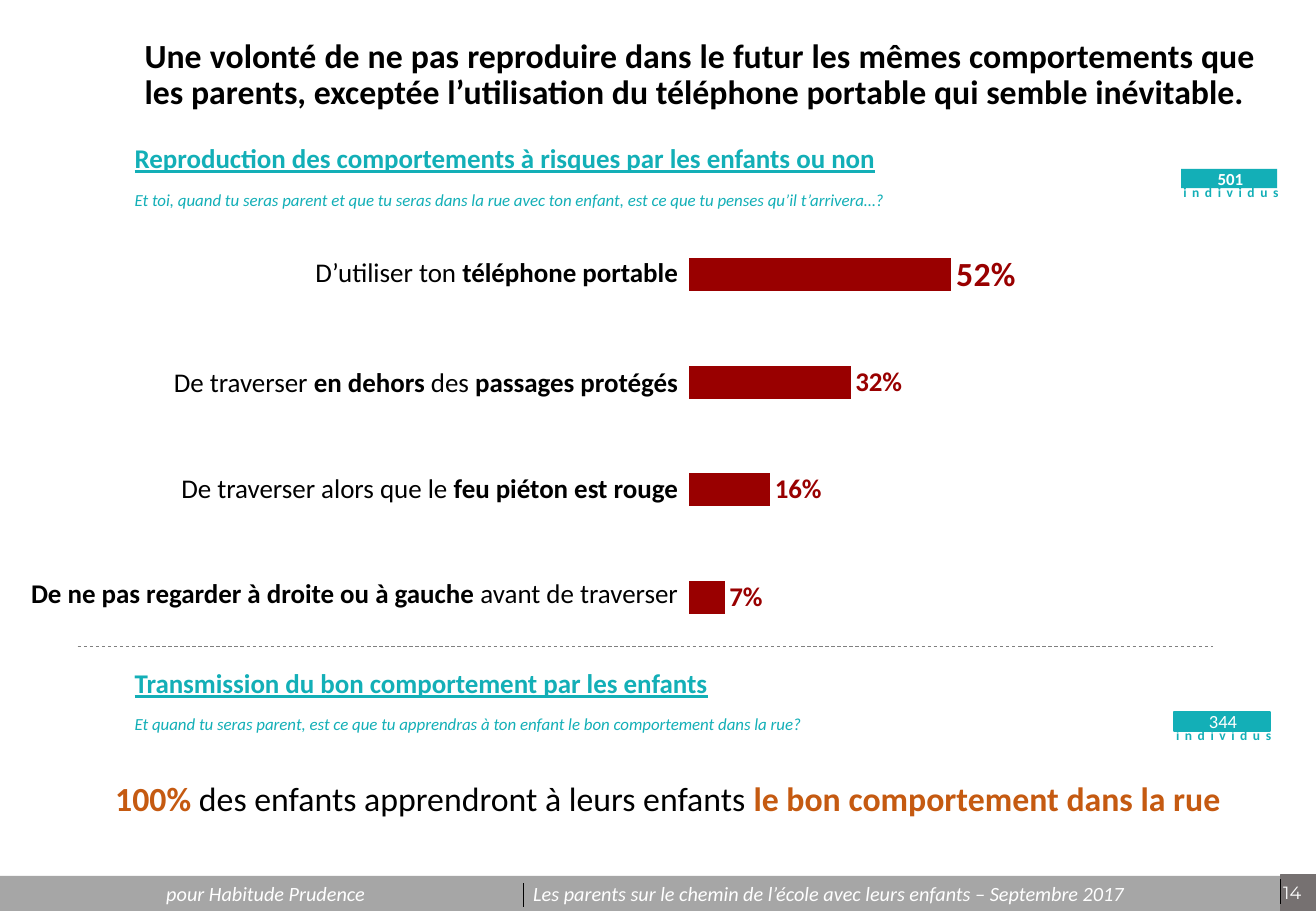
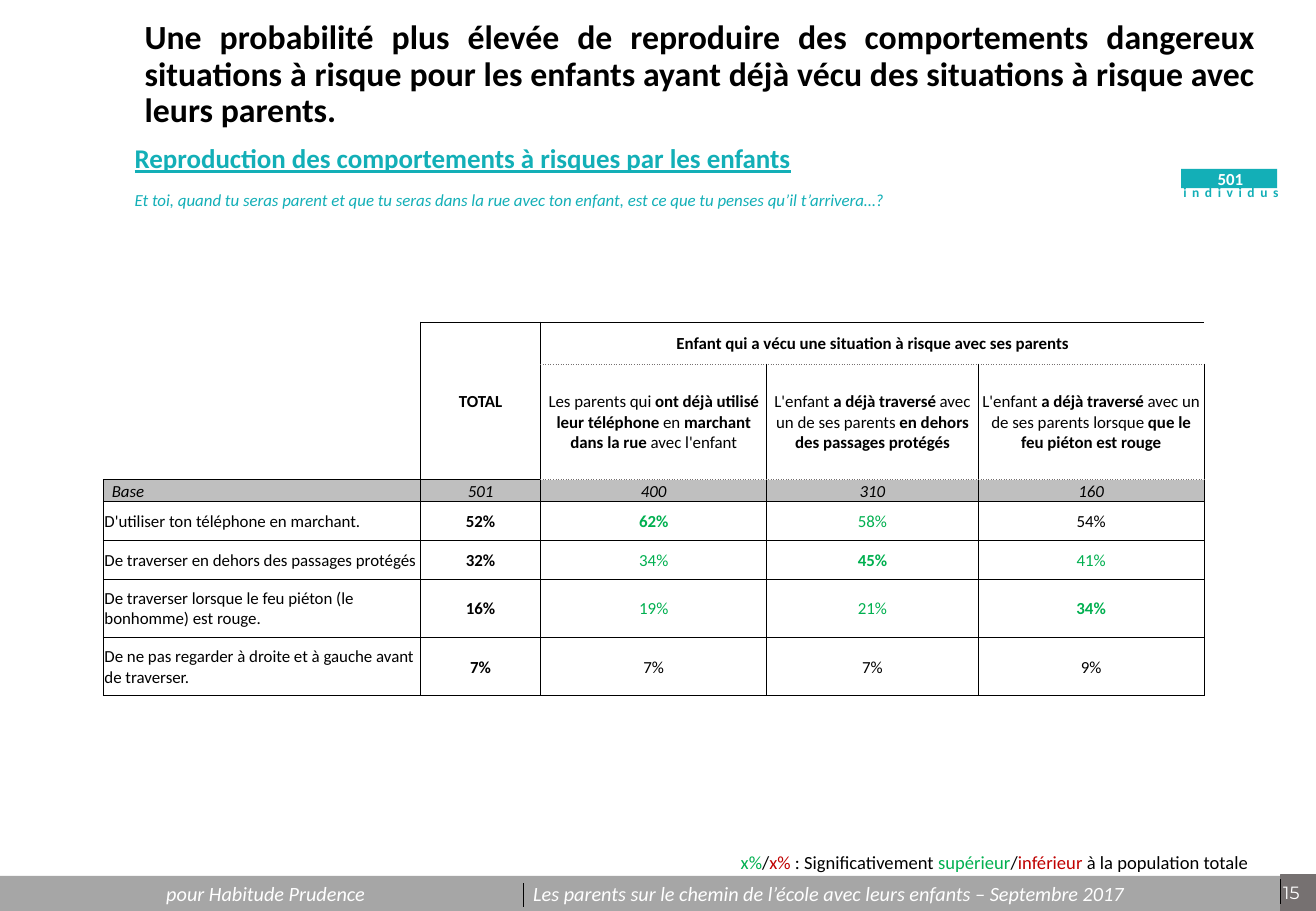
"""Build two survey slides on children's road behaviour."""
from lxml import etree
from pptx import Presentation
from pptx.chart.data import CategoryChartData
from pptx.dml.color import RGBColor
from pptx.enum import chart as charts, dml, shapes, text
from pptx.oxml.ns import qn
from pptx.util import Inches, Pt

TEAL = RGBColor(0x13, 0xAF, 0xB7)
BLACK = RGBColor(0, 0, 0)
WHITE = RGBColor(255, 255, 255)
BAND = RGBColor(0xA6, 0xA6, 0xA6)
SLATE = RGBColor(0x76, 0x71, 0x71)
SILVER = RGBColor(0xBF, 0xBF, 0xBF)
GREY = RGBColor(0x80, 0x80, 0x80)
ORANGE = RGBColor(0xC5, 0x5A, 0x11)
GREEN = RGBColor(0x00, 0xB0, 0x50)
RED = RGBColor(0xC0, 0, 0)
MAROON = RGBColor(0x99, 0, 0)
FONT = "Calibri"
PLAIN = "{2D5ABB26-0587-4C30-8999-92F81FD0307C}"
LEFT, MID, RIGHT, FULL = (text.PP_ALIGN.LEFT, text.PP_ALIGN.CENTER,
                          text.PP_ALIGN.RIGHT, text.PP_ALIGN.JUSTIFY)
CENTRE = text.MSO_ANCHOR.MIDDLE
ASK = ("Et toi, quand tu seras parent et que tu seras dans la rue avec ton enfant, "
       "est ce que tu penses qu’il t’arrivera…?")


def style(font, size, color, flags="", name=FONT):
    """Format a font; flags holds b, i and u."""
    font.name, font.size = name, Pt(size)
    font.color.rgb = color
    font.bold, font.italic, font.underline = (f in flags for f in "biu")


def write(para, size, parts, align=LEFT, name=FONT):
    """Add runs given as (words, color, flags)."""
    para.alignment = align
    for words, color, flags in parts:
        run = para.add_run()
        run.text = words
        style(run.font, size, color, flags, name)


def mix(*words, first=False):
    """Return black parts that alternate between regular and bold."""
    return [(w, BLACK, "b" if (i % 2 == 0) == first else "")
            for i, w in enumerate(words)]


def box(slide, x, y, w, h, size, parts, align=LEFT):
    """Add a wrapped text box and return its first paragraph."""
    shape = slide.shapes.add_textbox(Inches(x), Inches(y), Inches(w), Inches(h))
    shape.text_frame.word_wrap = True
    para = shape.text_frame.paragraphs[0]
    write(para, size, parts, align)
    return para


def block(slide, x, y, w, h, color, edge=0):
    """Add a filled rectangle and return its text frame."""
    shape = slide.shapes.add_shape(shapes.MSO_SHAPE.RECTANGLE, Inches(x),
                                   Inches(y), Inches(w), Inches(h))
    shape.shadow.inherit = False
    shape.fill.solid()
    shape.fill.fore_color.rgb = color
    if edge:
        shape.line.color.rgb = color
        shape.line.width = Pt(edge)
    else:
        shape.line.fill.background()
    frame = shape.text_frame
    frame.margin_left = Inches(0.02)
    frame.margin_right = frame.margin_top = frame.margin_bottom = 0
    frame.vertical_anchor = CENTRE
    return frame


def rule(slide, x1, y1, x2, y2, color, dash=None):
    """Draw a thin straight line."""
    line = slide.shapes.add_connector(shapes.MSO_CONNECTOR.STRAIGHT, Inches(x1),
                                      Inches(y1), Inches(x2), Inches(y2))
    line.line.color.rgb = color
    line.line.width = Pt(0.5)
    if dash:
        line.line.dash_style = dash
    etree.SubElement(line._element.spPr, qn("a:effectLst"))


def badge(slide, x, y, count, size, flags="", edge=0):
    """Show the number of people asked."""
    para = box(slide, x - 0.08, y + 0.08, 1.2, 0.24, 8, [("individus", TEAL, "b")])
    para.runs[0].font._element.set("spc", "330")
    frame = block(slide, x, y, 0.79, 0.16, TEAL, edge)
    write(frame.paragraphs[0], size, [(count, WHITE, flags)], MID)


def section(slide, y, head, ask):
    """Add an underlined heading with its question below."""
    para = box(slide, 1.01, y, 8.43, 0.6, 16, [(head, TEAL, "bu")])
    para.line_spacing = 0.9
    para = para._parent.add_paragraph()
    para.line_spacing, para.space_before = 0.9, Pt(10)
    write(para, 10, [(ask, TEAL, "i")])


def start(deck, title, page):
    """Add a slide with its title, footer band and badge."""
    slide = deck.slides.add_slide(deck.slide_layouts[5])
    block(slide, 0, 7.21, 10.83, 0.29, BAND)
    frame = block(slide, 10.54, 7.2, 0.29, 0.3, SLATE, 1)
    write(frame.paragraphs[0], 10.5, [(page, WHITE, "")], name="Montserrat")
    rule(slide, 10.54, 7.24, 10.54, 7.44, BLACK)
    rule(slide, 4.31, 7.27, 4.31, 7.47, BLACK)
    for x, w, words in (
            (1.27, 2.5, "pour Habitude Prudence"),
            (4.29, 5.6, "Les parents sur le chemin de l’école avec leurs enfants"
                        " – Septembre 2017")):
        box(slide, x, 7.21, w, 0.3, 12, [(words, WHITE, "i")])
    head = slide.shapes.title
    head.left, head.top = Inches(1.09), Inches(0.31)
    head.width, head.height = Inches(9.34), Inches(0.62)
    head.text_frame.auto_size = text.MSO_AUTO_SIZE.NONE
    head.text_frame.vertical_anchor = CENTRE
    para = head.text_frame.paragraphs[0]
    para.line_spacing = 0.9
    write(para, 20, [(title, BLACK, "b")], FULL)
    badge(slide, 9.72, 1.39, "501", 10, "b")
    return slide


def grid(slide, x, y, cols, rows):
    """Add a table without style or fill."""
    table = slide.shapes.add_table(len(rows), len(cols), Inches(x), Inches(y),
                                   Inches(sum(cols)), Inches(sum(rows))).table
    table.first_row = table.horz_banding = False
    table._tbl.tblPr.find(qn("a:tableStyleId")).text = PLAIN
    for col, width in zip(table.columns, cols):
        col.width = Inches(width)
    for row, height in zip(table.rows, rows):
        row.height = Inches(height)
    return table


def fill(cell, size, parts, align):
    """Write into a table cell, centred in height."""
    cell.vertical_anchor = CENTRE
    write(cell.text_frame.paragraphs[0], size, parts, align)


def border(cell, side, color, width, dash):
    """Draw one side of a cell."""
    line = etree.SubElement(cell._tc.get_or_add_tcPr(), qn("a:ln" + side),
                            w=str(Pt(width)))
    solid = etree.SubElement(line, qn("a:solidFill"))
    etree.SubElement(solid, qn("a:srgbClr"), val=str(color))
    etree.SubElement(line, qn("a:prstDash"), val=dash)


def edges(row, col):
    """List the sides of a cell that show a line."""
    if row > 2:
        return "LRTB"
    if col == 0:
        return "RB" if row == 2 else "R"
    group = col > 1
    shown = {"L": row or col < 3, "R": row or col in (1, 4),
             "T": row == 0 or (group and row == 1),
             "B": row == 2 or (group and row == 0)}
    return [side for side in "LRTB" if shown[side]]


def bars(slide):
    """Add the bar chart of shares."""
    data = CategoryChartData(number_format="0%")
    data.categories = ["1", "2", "3", "4"]
    data.add_series("Series 1", (0.52, 0.32, 0.16, 0.07))
    chart = slide.shapes.add_chart(charts.XL_CHART_TYPE.BAR_CLUSTERED, Inches(5.18),
                                   Inches(1.7), Inches(5.04), Inches(3.78), data).chart
    chart.has_legend = chart.has_title = False
    style(chart.font, 10, BLACK)
    axis = chart.value_axis
    axis.minimum_scale, axis.maximum_scale = 0, 1
    axis.has_major_gridlines = False
    axis.visible = chart.category_axis.visible = False
    chart.category_axis.reverse_order = True
    plot = chart.plots[0]
    plot.gap_width, plot.overlap, plot.vary_by_categories = 227, -48, False
    series = plot.series[0]
    series.format.fill.solid()
    series.format.fill.fore_color.rgb = MAROON
    top = series.points[0].data_label
    for labels, size in ((series.data_labels, 16), (top, 20)):
        style(labels.font, size, MAROON, "b")
        labels.position = charts.XL_LABEL_POSITION.OUTSIDE_END
    series.data_labels.show_value = True
    series.data_labels.number_format = "0%"
    series.data_labels.number_format_is_linked = False
    area = chart._chartSpace.find(".//" + qn("c:plotArea"))
    for old in area.findall(qn("c:layout")):
        area.remove(old)
    layout = etree.Element(qn("c:layout"))
    area.insert(0, layout)
    manual = etree.SubElement(layout, qn("c:manualLayout"))
    for tag, val in (("layoutTarget", "inner"), ("xMode", "edge"), ("yMode", "edge"),
                     ("x", "0.098"), ("y", "0.032"), ("w", "0.823"), ("h", "0.937")):
        etree.SubElement(manual, qn("c:" + tag), val=val)


def wishes(deck):
    """Build the slide with bars and the full-agreement line."""
    slide = start(deck, "Une volonté de ne pas reproduire dans le futur les mêmes "
                  "comportements que les parents, exceptée l’utilisation du téléphone "
                  "portable qui semble inévitable.", "14")
    section(slide, 1.15, "Reproduction des comportements à risques par les enfants ou non",
            ASK)
    bars(slide)
    table = grid(slide, 0, 1.78, [5.68], [0.94, 0.87, 0.87, 0.87])
    for row, parts in enumerate((
            mix("D’utiliser ton ", "téléphone portable"),
            mix("De traverser ", "en dehors ", "des", " passages protégés"),
            mix("De traverser alors que le ", "feu piéton est rouge"),
            mix("De ne pas regarder à droite ou à gauche ", "avant de traverser",
                first=True))):
        fill(table.cell(row, 0), 16, parts, RIGHT)
    rule(slide, 0.64, 5.32, 9.98, 5.32, GREY, dml.MSO_LINE.DASH)
    section(slide, 5.47, "Transmission du bon comportement par les enfants",
            "Et quand tu seras parent, est ce que tu apprendras à ton enfant le bon "
            "comportement dans la rue?")
    badge(slide, 9.66, 5.86, "344", 11, edge=1)
    box(slide, 0.85, 6.35, 9.62, 0.44, 20,
        [("100% ", ORANGE, "b"), ("des enfants apprendront à leurs enfants ", BLACK, ""),
         ("le bon comportement dans la rue", ORANGE, "b")], FULL)


def cross(slide):
    """Add the table of shares by lived situation."""
    table = grid(slide, 0.85, 2.65, [2.61, 0.99, 1.86, 1.74, 1.86],
                 [0.35, 0.32, 0.63, 0.18, 0.32, 0.32, 0.48, 0.48])
    for row in range(8):
        for col in range(5):
            cell = table.cell(row, col)
            cell.margin_left = cell.margin_right = cell.margin_top = Inches(0.01)
            cell.margin_bottom = 0
            for side in edges(row, col):
                dots = col > 1 and (row, side) in ((0, "B"), (1, "T"))
                border(cell, side, *((SLATE, 1, "sysDot") if dots
                                     else (BLACK, 0.5, "solid")))
            if row == 3:
                cell.fill.solid()
                cell.fill.fore_color.rgb = SILVER
            else:
                cell.fill.background()
    for row, col, last, end, parts in (
            (0, 1, 2, 1, mix("TOTAL", first=True)),
            (0, 2, 0, 4, mix("Enfant qui a vécu une situation à risque avec ses parents",
                             first=True)),
            (1, 2, 2, 2, mix("Les parents qui ", "ont déjà utilisé leur téléphone ", "en ",
                             "marchant dans la rue ", "avec l'enfant")),
            (1, 3, 2, 3, mix("L'enfant ", "a déjà traversé", " avec un de ses parents ",
                             "en dehors des passages protégés")),
            (1, 4, 2, 4, mix("L'enfant ", "a déjà traversé ",
                             "avec un de ses parents lorsque ",
                             "que le feu piéton est rouge"))):
        table.cell(row, col).merge(table.cell(last, end))
        fill(table.cell(row, col), 10, parts, MID)
    for col, words in enumerate(("Base", "501", "400", "310", "160")):
        fill(table.cell(3, col), 10, [(words, BLACK, "i")], MID if col else LEFT)
    table.cell(3, 0).margin_left = Inches(0.07)
    for i, (label, greens, *vals) in enumerate((
            ("D'utiliser ton téléphone en marchant.", 2, 52, 62, 58, 54),
            ("De traverser en dehors des passages protégés", 3, 32, 34, 45, 41),
            ("De traverser lorsque le feu piéton (le bonhomme) est rouge.", 3,
             16, 19, 21, 34),
            ("De ne pas regarder à droite et à gauche avant de traverser.", 0,
             7, 7, 7, 9))):
        fill(table.cell(i + 4, 0), 10, [(label, BLACK, "")], LEFT)
        for j, val in enumerate(vals):
            color = GREEN if 0 < j <= greens else BLACK
            fill(table.cell(i + 4, j + 1), 10,
                 [(f"{val}%", color, "b" if j in (0, i + 1) else "")], MID)


def odds(deck):
    """Build the slide with the cross table and its legend."""
    slide = start(deck, "Une probabilité plus élevée de reproduire des comportements "
                  "dangereux situations à risque pour les enfants ayant déjà vécu des "
                  "situations à risque avec leurs parents.", "15")
    section(slide, 1.15, "Reproduction des comportements à risques par les enfants", ASK)
    cross(slide)
    box(slide, 4.15, 6.96, 6.22, 0.29, 11,
        [(words, color, "") for words, color in (
            ("x%", GREEN), ("/", BLACK), ("x%", RED), (" : Significativement ", BLACK),
            ("supérieur", GREEN), ("/", BLACK), ("inférieur", RED),
            (" à la population totale", BLACK))], RIGHT)


def main():
    """Build and save the deck."""
    deck = Presentation()
    deck.slide_width, deck.slide_height = Inches(10.83), Inches(7.5)
    wishes(deck)
    odds(deck)
    deck.save("out.pptx")


if __name__ == "__main__":
    main()
